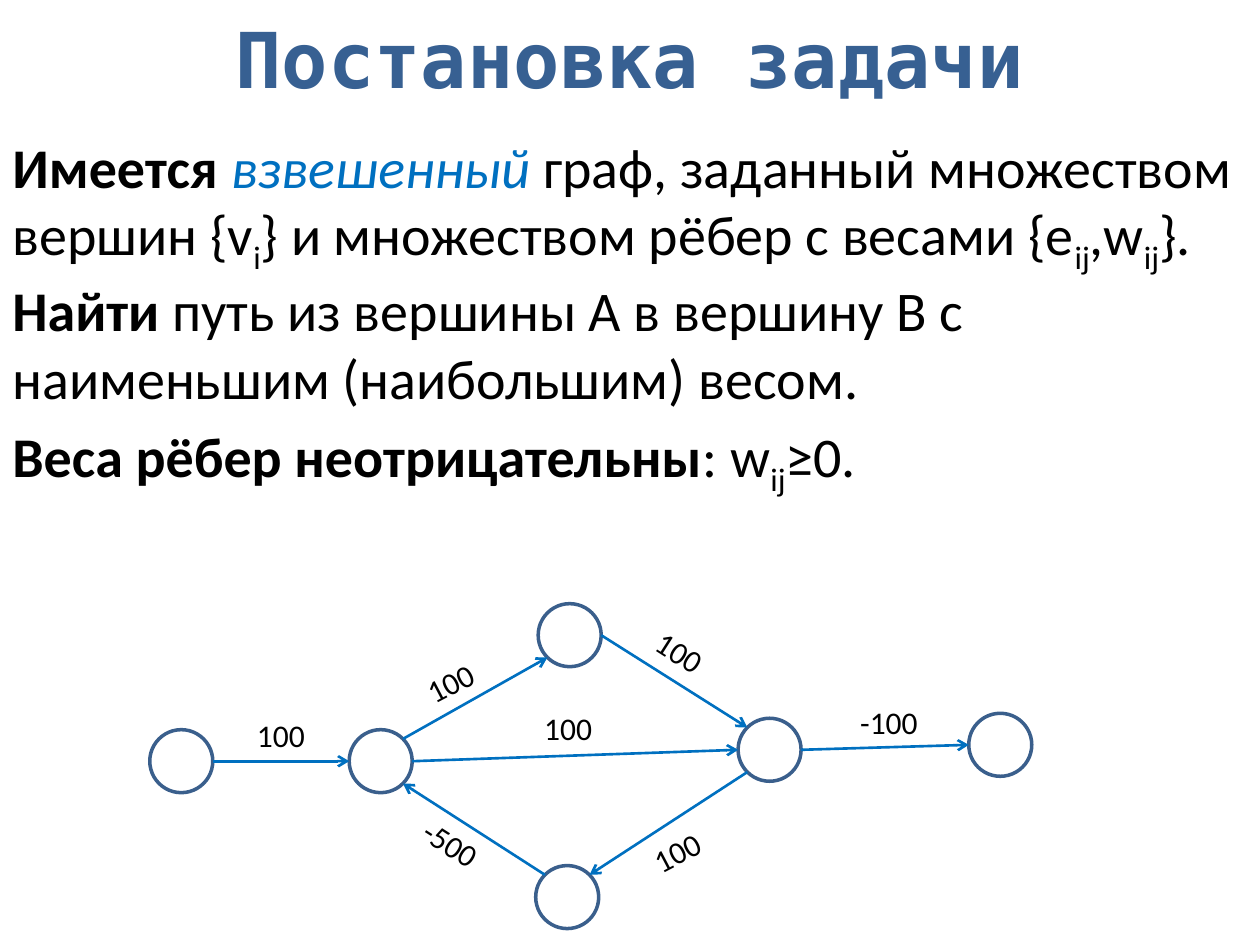
import math
import pptx
import pptx.util
import pptx.dml.color
import pptx.enum.shapes
import pptx.enum.text
import pptx.oxml.ns
from lxml import etree

Cm, Pt = pptx.util.Cm, pptx.util.Pt
qn = pptx.oxml.ns.qn
TEXT = pptx.enum.text

WIDE, HIGH = 25.4, 19.05
SIZE = 1.27
BLACK, BLUE, RING = "000000", "0070C0", "3A5F8C"

HEAD = {"size": Pt(44), "name": "DejaVu Sans Mono", "bold": True}
BODY = {"size": Pt(32), "name": "Calibri"}
MARK = {"size": Pt(18), "name": "Calibri"}
BOLD = {"bold": True}
SUB = {"sub": True}

TITLE = [[("Постановка задачи", {"color": "376092"})]]
TASK = [
    [
        ("Имеется ", BOLD),
        ("взвешенный", {"italic": True, "color": BLUE}),
        (" граф, заданный множеством вершин {v", {}),
        ("i", SUB),
        ("} и множеством рёбер с весами {e", {}),
        ("ij", SUB),
        (",w", {}),
        ("ij", SUB),
        ("}. ", {}),
        ("Найти", BOLD),
        (" путь из вершины A в вершину B c наименьшим (наибольшим) весом.", {}),
    ],
    [
        ("Веса рёбер неотрицательны", BOLD),
        (": w", {}),
        ("ij", SUB),
        ("≥0.", {}),
    ],
]
NODES = {
    "start": (3.02, 14.71),
    "fork": (7.04, 14.71),
    "top": (10.85, 12.17),
    "low": (10.8, 17.45),
    "join": (14.88, 14.48),
    "end": (19.53, 14.38),
}
EDGES = [
    ("start", 6, "fork", 2),
    ("fork", 7, "top", 3),
    ("top", 6, "join", 1),
    ("join", 3, "low", 7),
    ("low", 1, "fork", 5),
    ("fork", 6, "join", 2),
    ("join", 6, "end", 2),
]
MARKS = [
    ("100", 4.93, 14.3, 1.47, 0),
    ("-100", 17.09, 14.05, 2, 0),
    ("100", 8.31, 13.13, 2, 332.3),
    ("100", 12.88, 16.54, 2, 332.3),
    ("100", 12.93, 12.78, 2, 32.6),
    ("-500", 8.23, 16.59, 2, 32.6),
    ("100", 10.72, 14.17, 1.47, 0),
]


def tint(code):
    return pptx.dml.color.RGBColor.from_string(code)


def add_text(page, box, paras, base, **form):
    shape = page.shapes.add_textbox(*map(Cm, box))
    frame = shape.text_frame
    frame.word_wrap = True
    for num, runs in enumerate(paras):
        para = frame.add_paragraph() if num else frame.paragraphs[0]
        for key, val in form.items():
            setattr(para, key, val)
        for words, extra in runs:
            style = {"color": BLACK, **base, **extra}
            run = para.add_run()
            run.text = words
            run.font.color.rgb = tint(style.pop("color"))
            if style.pop("sub", False):
                run._r.get_or_add_rPr().set("baseline", "-25000")
            for key, val in style.items():
                setattr(run.font, key, val)
    return shape


def add_node(page, left, top):
    oval = pptx.enum.shapes.MSO_SHAPE.OVAL
    node = page.shapes.add_shape(oval, *map(Cm, (left, top, SIZE, SIZE)))
    node.shadow.inherit = False
    node.fill.background()
    node.line.color.rgb = tint(RING)
    node.line.width = Pt(2)
    return node


def find_site(name, site):
    left, top = NODES[name]
    turn = math.radians(45 * site)
    half = SIZE / 2
    return (Cm(left + half - half * math.sin(turn)),
            Cm(top + half - half * math.cos(turn)))


def add_edge(page, nodes, tail, out, head, into):
    kind = pptx.enum.shapes.MSO_CONNECTOR.STRAIGHT
    edge = page.shapes.add_connector(
        kind, *find_site(tail, out), *find_site(head, into))
    edge.line.color.rgb = tint(BLUE)
    edge.line.width = Pt(1.5)
    etree.SubElement(edge.line._get_or_add_ln(), qn("a:tailEnd"), type="arrow")
    etree.SubElement(edge._element.spPr, qn("a:effectLst"))
    glue = edge._element.find(".//" + qn("p:cNvCxnSpPr"))
    for tag, name, site in (("a:stCxn", tail, out), ("a:endCxn", head, into)):
        etree.SubElement(glue, qn(tag), id=str(nodes[name].shape_id), idx=str(site))


def main():
    deck = pptx.Presentation()
    deck.slide_width, deck.slide_height = Cm(WIDE), Cm(HIGH)
    page = deck.slides.add_slide(deck.slide_layouts[6])
    title = add_text(page, (0, 0, WIDE, 2.34), TITLE, HEAD,
                     alignment=TEXT.PP_ALIGN.CENTER)
    title.text_frame.vertical_anchor = TEXT.MSO_ANCHOR.MIDDLE
    add_text(page, (0, 2.54, WIDE, 8.46), TASK, BODY, space_before=Pt(6.4))
    nodes = {name: add_node(page, *spot) for name, spot in NODES.items()}
    for edge in EDGES:
        add_edge(page, nodes, *edge)
    for words, left, top, wide, turn in MARKS:
        mark = add_text(page, (left, top, wide, 1.02), [[(words, {})]], MARK)
        mark.text_frame.auto_size = TEXT.MSO_AUTO_SIZE.SHAPE_TO_FIT_TEXT
        mark.rotation = turn
    deck.save("out.pptx")


if __name__ == "__main__":
    main()
